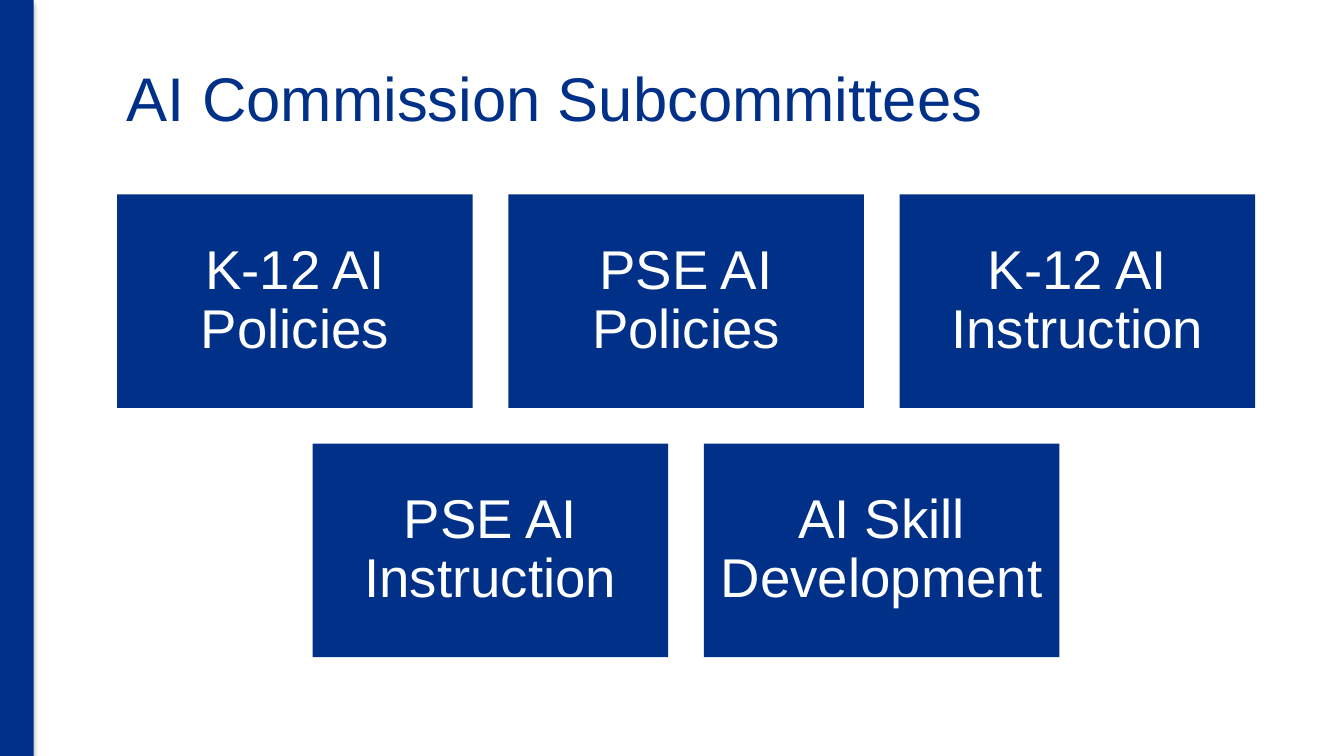
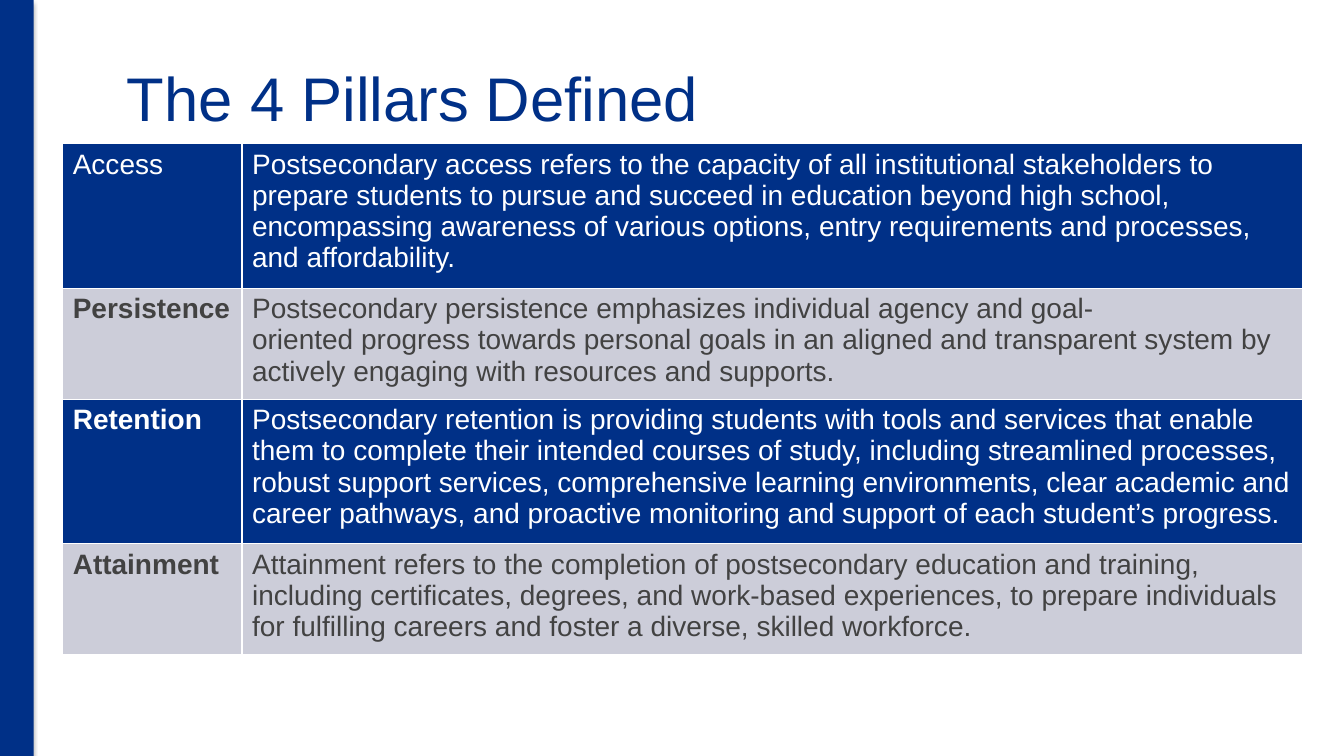
"""Build two slides: the commission subcommittees and the four pillars."""
from dataclasses import dataclass

from lxml import etree
from pptx import Presentation
from pptx.dml.color import RGBColor
from pptx.enum.shapes import MSO_SHAPE
from pptx.enum.text import MSO_ANCHOR, PP_ALIGN
from pptx.oxml import parse_xml
from pptx.oxml.ns import nsdecls
from pptx.util import Cm, Pt

RECT = MSO_SHAPE.RECTANGLE
MIDDLE = MSO_ANCHOR.MIDDLE
LEFT, CENTER = PP_ALIGN.LEFT, PP_ALIGN.CENTER


@dataclass(frozen=True)
class Theme:
    font: str = "Arial"
    blue: str = "003087"
    grey: str = "CCCDD9"
    white: str = "FFFFFF"
    ink: str = "424242"
    title_size: int = 44
    box_size: int = 39
    table_size: int = 20


THEME = Theme()
SLIDE_W, SLIDE_H = 33.87, 19.05
BAND_W = 0.85
MARGIN, CONTENT_W = 2.95, 28.68

COMMITTEES_TITLE = "AI Commission Subcommittees"
COMMITTEES = [
    ["K-12 AI Policies", "PSE AI Policies", "K-12 AI Instruction"],
    ["PSE AI Instruction", "AI Skill Development"],
]
BOX_TOP, BOX_W, BOX_H, BOX_GAP = 4.9, 8.96, 5.38, 0.9

PILLARS_TITLE = "The 4 Pillars Defined"
PILLARS = [
    ("Access", [
        "Postsecondary access refers to the capacity of all institutional "
        "stakeholders to prepare students to pursue and succeed in education "
        "beyond high school, encompassing awareness of various options, entry "
        "requirements and processes, and affordability."]),
    ("Persistence", [
        "Postsecondary persistence emphasizes individual agency and goal-",
        "oriented progress towards personal goals in an aligned and transparent "
        "system by actively engaging with resources and supports."]),
    ("Retention", [
        "Postsecondary retention is providing students with tools and services "
        "that enable them to complete their intended courses of study, including "
        "streamlined processes, robust support services, comprehensive learning "
        "environments, clear academic and career pathways, and proactive "
        "monitoring and support of each student’s progress."]),
    ("Attainment", [
        "Attainment refers to the completion of postsecondary education and "
        "training, including certificates, degrees, and work-based experiences, "
        "to prepare individuals for fulfilling careers and foster a diverse, "
        "skilled workforce."]),
]
TABLE_LEFT, TABLE_TOP = 1.58, 3.62
COL_WIDTHS = [4.52, 26.72]
ROW_HEIGHTS = [3.4, 2.63]
ROW_COLORS = [(THEME.blue, THEME.white), (THEME.grey, THEME.ink)]

BAND_SHADOW = (
    f'<a:effectLst {nsdecls("a")}><a:outerShdw blurRad="39370" dist="22860" '
    'dir="5400000" rotWithShape="0"><a:srgbClr val="000000">'
    '<a:alpha val="35000"/></a:srgbClr></a:outerShdw></a:effectLst>')


def write(tf, lines, size, color, bold=False, align=LEFT, spacing=None):
    fmt = {"name": THEME.font, "size": Pt(size), "bold": bold}
    for i, line in enumerate(lines):
        p = tf.add_paragraph() if i else tf.paragraphs[0]
        p.alignment = align
        p.line_spacing = spacing
        r = p.add_run()
        r.text = line
        for name, value in fmt.items():
            setattr(r.font, name, value)
        r.font.color.rgb = RGBColor.from_string(color)


def add_block(s, left, top, width, height):
    sp = s.shapes.add_shape(RECT, Cm(left), Cm(top), Cm(width), Cm(height))
    sp.shadow.inherit = False
    sp.fill.solid()
    sp.fill.fore_color.rgb = RGBColor.from_string(THEME.blue)
    sp.line.fill.background()
    return sp


def add_slide(prs, title):
    s = prs.slides.add_slide(prs.slide_layouts[6])
    band = add_block(s, 0, 0, BAND_W, SLIDE_H)
    spPr = band.element.spPr
    spPr.replace(spPr.find("{*}effectLst"), parse_xml(BAND_SHADOW))
    tf = s.shapes.add_textbox(Cm(MARGIN), Cm(0.85), Cm(CONTENT_W), Cm(3.18)).text_frame
    tf.word_wrap = True
    tf.vertical_anchor = MIDDLE
    write(tf, [title], THEME.title_size, THEME.blue)
    return s


def add_committees(s):
    for i, names in enumerate(COMMITTEES):
        row_w = len(names) * (BOX_W + BOX_GAP) - BOX_GAP
        left = MARGIN + (CONTENT_W - row_w) / 2
        top = BOX_TOP + i * (BOX_H + BOX_GAP)
        for j, name in enumerate(names):
            sp = add_block(s, left + j * (BOX_W + BOX_GAP), top, BOX_W, BOX_H)
            tf = sp.text_frame
            fmt = {"word_wrap": True, "vertical_anchor": MIDDLE}
            fmt.update({f"margin_{side}": Cm(0.4)
                        for side in ("left", "top", "right", "bottom")})
            for key, value in fmt.items():
                setattr(tf, key, value)
            write(tf, [name], THEME.box_size, THEME.white, align=CENTER, spacing=0.9)


def add_borders(cell):
    tcPr = cell._tc.get_or_add_tcPr()
    for i, side in enumerate(("lnL", "lnR", "lnT", "lnB")):
        xml = (f'<a:{side} {nsdecls("a")} w="12700"><a:solidFill>'
               f'<a:srgbClr val="{THEME.white}"/></a:solidFill></a:{side}>')
        tcPr.insert(i, etree.fromstring(xml))


def add_pillars(s):
    heights = [ROW_HEIGHTS[i % 2] for i in range(len(PILLARS))]
    table = s.shapes.add_table(
        len(PILLARS), len(COL_WIDTHS), Cm(TABLE_LEFT), Cm(TABLE_TOP),
        Cm(sum(COL_WIDTHS)), Cm(sum(heights))).table
    table.first_row = table.horz_banding = False
    for col, width in zip(table.columns, COL_WIDTHS):
        col.width = Cm(width)
    for i, (name, definition) in enumerate(PILLARS):
        table.rows[i].height = Cm(heights[i])
        fill, color = ROW_COLORS[i % 2]
        for j, lines in enumerate(([name], definition)):
            cell = table.cell(i, j)
            cell.fill.solid()
            cell.fill.fore_color.rgb = RGBColor.from_string(fill)
            add_borders(cell)
            write(cell.text_frame, lines, THEME.table_size, color,
                  bold=i > 0 and j == 0)


def main():
    prs = Presentation()
    prs.slide_width, prs.slide_height = Cm(SLIDE_W), Cm(SLIDE_H)
    add_committees(add_slide(prs, COMMITTEES_TITLE))
    add_pillars(add_slide(prs, PILLARS_TITLE))
    prs.save("out.pptx")


if __name__ == "__main__":
    main()
